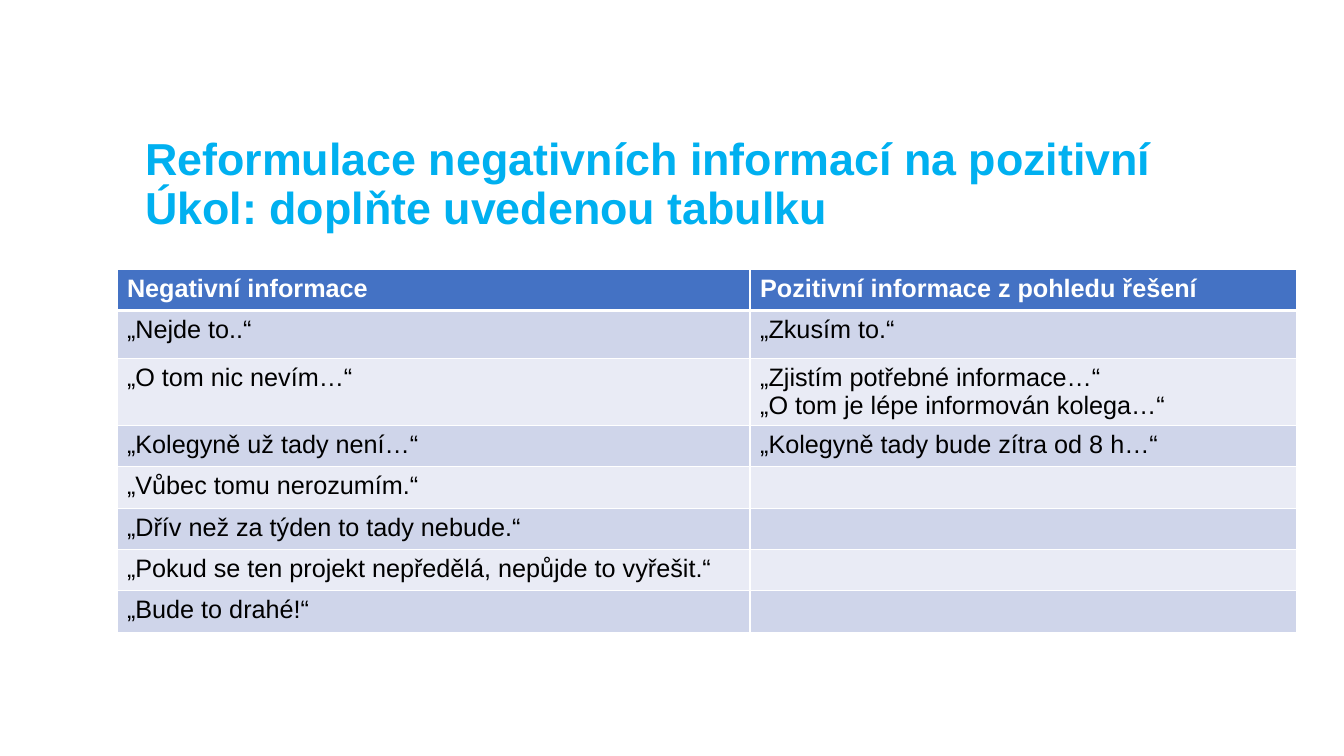
"""Build a slide with a title and a table of negative and positive phrasings."""
from dataclasses import dataclass

from lxml.etree import SubElement
from pptx import Presentation
from pptx.dml.color import RGBColor
from pptx.enum.text import MSO_ANCHOR, MSO_AUTO_SIZE, PP_ALIGN
from pptx.oxml.ns import qn
from pptx.slide import Slide
from pptx.table import _Cell
from pptx.text.text import _Paragraph
from pptx.util import Emu, Inches, Pt


@dataclass(frozen=True)
class Theme:
    font: str = "Arial"
    title_size: int = 32
    table_size: int = 18
    title: str = "00B0F0"
    header: str = "4472C4"
    bands: tuple[str, str] = ("CFD5EA", "E9EBF5")
    light: str = "FFFFFF"
    dark: str = "000000"
    thin_border: int = 1
    header_border: int = 3


@dataclass(frozen=True)
class PhraseRow:
    negative: str
    positive: tuple[str, ...] = ()
    height: float = 5.47


THEME = Theme()
WIDTH, HEIGHT = Inches(13.33), Inches(7.5)
TITLE_LINES = (
    "Reformulace negativních informací na pozitivní",
    "Úkol: doplňte uvedenou tabulku",
)
COLUMN_SHARES = (47.11, 40.66)
ROWS = (
    PhraseRow("Negativní informace", ("Pozitivní informace z pohledu řešení",)),
    PhraseRow("„Nejde to..“", ("„Zkusím to.“",), height=6.4),
    PhraseRow(
        "„O tom nic nevím…“",
        ("„Zjistím potřebné informace…“", "„O tom je lépe informován kolega…“"),
        height=8.8,
    ),
    PhraseRow("„Kolegyně už tady není…“", ("„Kolegyně tady bude zítra od 8 h…“",)),
    PhraseRow("„Vůbec tomu nerozumím.“"),
    PhraseRow("„Dřív než za týden to tady nebude.“"),
    PhraseRow("„Pokud se ten projekt nepředělá, nepůjde to vyřešit.“"),
    PhraseRow("„Bude to drahé!“"),
)


def across(share: float) -> Emu:
    """Return a percentage of the slide's width."""
    return Emu(round(WIDTH * share / 100))


def down(share: float) -> Emu:
    """Return a percentage of the slide's height."""
    return Emu(round(HEIGHT * share / 100))


def add_span(para: _Paragraph, text: str, size: int, color: str, bold: bool) -> None:
    """Add one formatted run to a paragraph."""
    span = para.add_run()
    span.text = text
    span.font.name = THEME.font
    span.font.size = Pt(size)
    span.font.bold = bold
    span.font.color.rgb = RGBColor.from_string(color)


def add_title(page: Slide) -> None:
    """Place and fill the title placeholder."""
    box = page.shapes.title
    box.left, box.top = across(10.05), down(16.8)
    box.width, box.height = across(85.22), down(15.47)
    frame = box.text_frame
    frame.word_wrap = True
    frame.auto_size = MSO_AUTO_SIZE.NONE
    frame.vertical_anchor = MSO_ANCHOR.MIDDLE
    para = frame.paragraphs[0]
    para.alignment = PP_ALIGN.LEFT
    para.line_spacing = 0.9
    for index, line in enumerate(TITLE_LINES):
        if index:
            para.add_line_break()
        add_span(para, line, THEME.title_size, THEME.title, True)


def add_borders(cell: _Cell, top: int, bottom: int) -> None:
    """Draw the four borders of a cell with the given top and bottom widths."""
    properties = cell._tc.get_or_add_tcPr()
    thin = THEME.thin_border
    for side, width in (("L", thin), ("R", thin), ("T", top), ("B", bottom)):
        line = SubElement(properties, qn(f"a:ln{side}"), w=str(Pt(width)))
        fill = SubElement(line, qn("a:solidFill"))
        SubElement(fill, qn("a:srgbClr"), val=THEME.light)


def fill_cell(cell: _Cell, lines: tuple[str, ...], row_index: int) -> None:
    """Write and format a cell as part of the header or of a band."""
    is_header = row_index == 0
    thin, thick = THEME.thin_border, THEME.header_border
    add_borders(cell, thick if row_index == 1 else thin, thick if is_header else thin)
    cell.fill.solid()
    background = THEME.header if is_header else THEME.bands[(row_index - 1) % 2]
    cell.fill.fore_color.rgb = RGBColor.from_string(background)
    frame = cell.text_frame
    frame.paragraphs[0].font.size = Pt(THEME.table_size)
    for index, line in enumerate(lines):
        para = frame.add_paragraph() if index else frame.paragraphs[0]
        color = THEME.light if is_header else THEME.dark
        add_span(para, line, THEME.table_size, color, is_header)


def add_phrase_table(page: Slide) -> None:
    """Add the table of phrasings."""
    table = page.shapes.add_table(
        len(ROWS), len(COLUMN_SHARES), across(8.7), down(35.6),
        across(sum(COLUMN_SHARES)), down(sum(row.height for row in ROWS)),
    ).table
    for column, share in zip(table.columns, COLUMN_SHARES):
        column.width = across(share)
    for row_index, row in enumerate(ROWS):
        table.rows[row_index].height = down(row.height)
        for column_index, lines in enumerate(((row.negative,), row.positive)):
            fill_cell(table.cell(row_index, column_index), lines, row_index)


def main() -> None:
    """Build and save the deck."""
    deck = Presentation()
    deck.slide_width, deck.slide_height = WIDTH, HEIGHT
    page = deck.slides.add_slide(deck.slide_layouts.get_by_name("Title Only"))
    add_title(page)
    add_phrase_table(page)
    deck.save("out.pptx")


if __name__ == "__main__":
    main()
